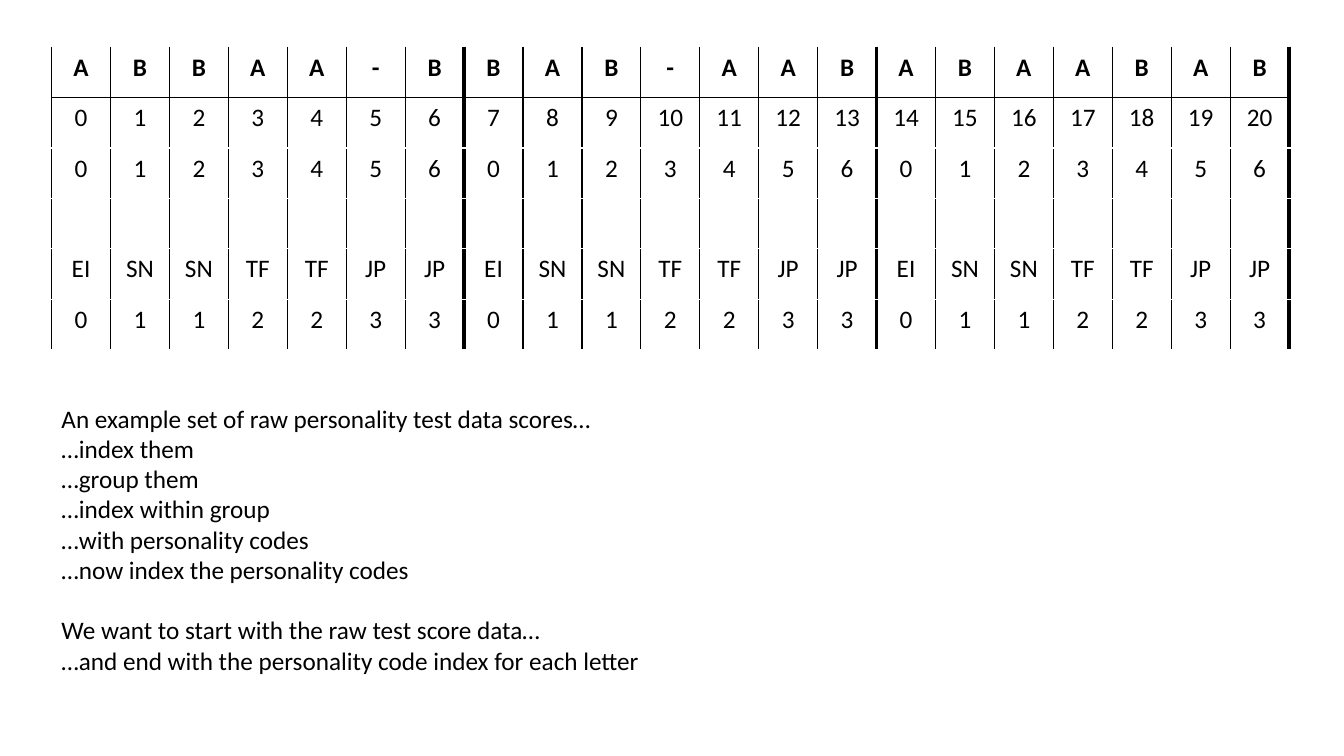
"""Build a slide that indexes raw personality test scores by group and code."""
import pptx
import pptx.dml.color
import pptx.enum.text
import pptx.oxml
import pptx.oxml.ns
import pptx.util
from pptx.util import Cm

BLACK = pptx.dml.color.RGBColor(0, 0, 0)
WHITE = pptx.dml.color.RGBColor(255, 255, 255)
FONT = {"name": "Calibri", "size": pptx.util.Pt(18), "bold": False}
LEFT = Cm(1.3)
GROUP = 7
SCORES = "ABBAA-BBAB-AABABAABAB"
CODES = ["EI", "SN", "SN", "TF", "TF", "JP", "JP"]
STEPS = [
    "An example set of raw personality test data scores…",
    "…index them",
    "…group them",
    "…index within group",
    "…with personality codes",
    "…now index the personality codes",
]
GOAL = [
    "We want to start with the raw test score data…",
    "…and end with the personality code index for each letter",
]


def score_rows():
    columns = range(len(SCORES))
    code_order = list(dict.fromkeys(CODES))
    codes = [CODES[c % GROUP] for c in columns]
    return [
        list(SCORES),
        list(columns),
        [c % GROUP for c in columns],
        [""] * len(SCORES),
        codes,
        [code_order.index(code) for code in codes],
    ]


def add_run(p, text, **changes):
    r = p.add_run()
    r.text = str(text)
    for name, value in {**FONT, **changes}.items():
        setattr(r.font, name, value)
    r.font.color.rgb = BLACK


def add_border(cell, side, color, width):
    xml = (
        f'<a:ln{side} {pptx.oxml.ns.nsdecls("a")} w="{pptx.util.Pt(width)}">'
        f'<a:solidFill><a:srgbClr val="{color}"/></a:solidFill></a:ln{side}>'
    )
    cell._tc.get_or_add_tcPr().append(pptx.oxml.parse_xml(xml))


def format_cell(cell, row, column):
    starts_group = column > 0 and column % GROUP == 0
    ends_group = column % GROUP == GROUP - 1
    add_border(cell, "L", BLACK, 3 if starts_group else 1)
    add_border(cell, "R", BLACK, 3 if ends_group else 1)
    add_border(cell, "T", BLACK if row == 1 else WHITE, 1)
    add_border(cell, "B", BLACK if row == 0 else WHITE, 1)
    cell.fill.solid()
    cell.fill.fore_color.rgb = WHITE


def add_score_table(slide):
    rows = score_rows()
    table = slide.shapes.add_table(
        len(rows), len(SCORES), LEFT, Cm(1.19), Cm(31.19), Cm(7.62)
    ).table
    table.horz_banding = False
    for i, values in enumerate(rows):
        for j, value in enumerate(values):
            cell = table.cell(i, j)
            format_cell(cell, i, j)
            p = cell.text_frame.paragraphs[0]
            p.alignment = pptx.enum.text.PP_ALIGN.CENTER
            if value != "":
                add_run(p, value, bold=i == 0)


def add_explanation(slide):
    sp = slide.shapes.add_textbox(LEFT, Cm(10.03), Cm(17.96), Cm(7.95))
    tf = sp.text_frame
    tf.word_wrap = True
    for i, line in enumerate(STEPS + GOAL):
        p = tf.add_paragraph() if i else tf.paragraphs[0]
        add_run(p, line)
        if line == GOAL[0]:
            p.space_before = pptx.util.Pt(21.6)


def main():
    prs = pptx.Presentation()
    prs.slide_width, prs.slide_height = Cm(33.87), Cm(19.05)
    slide = prs.slides.add_slide(prs.slide_layouts[6])
    add_score_table(slide)
    add_explanation(slide)
    prs.save("out.pptx")


if __name__ == "__main__":
    main()
